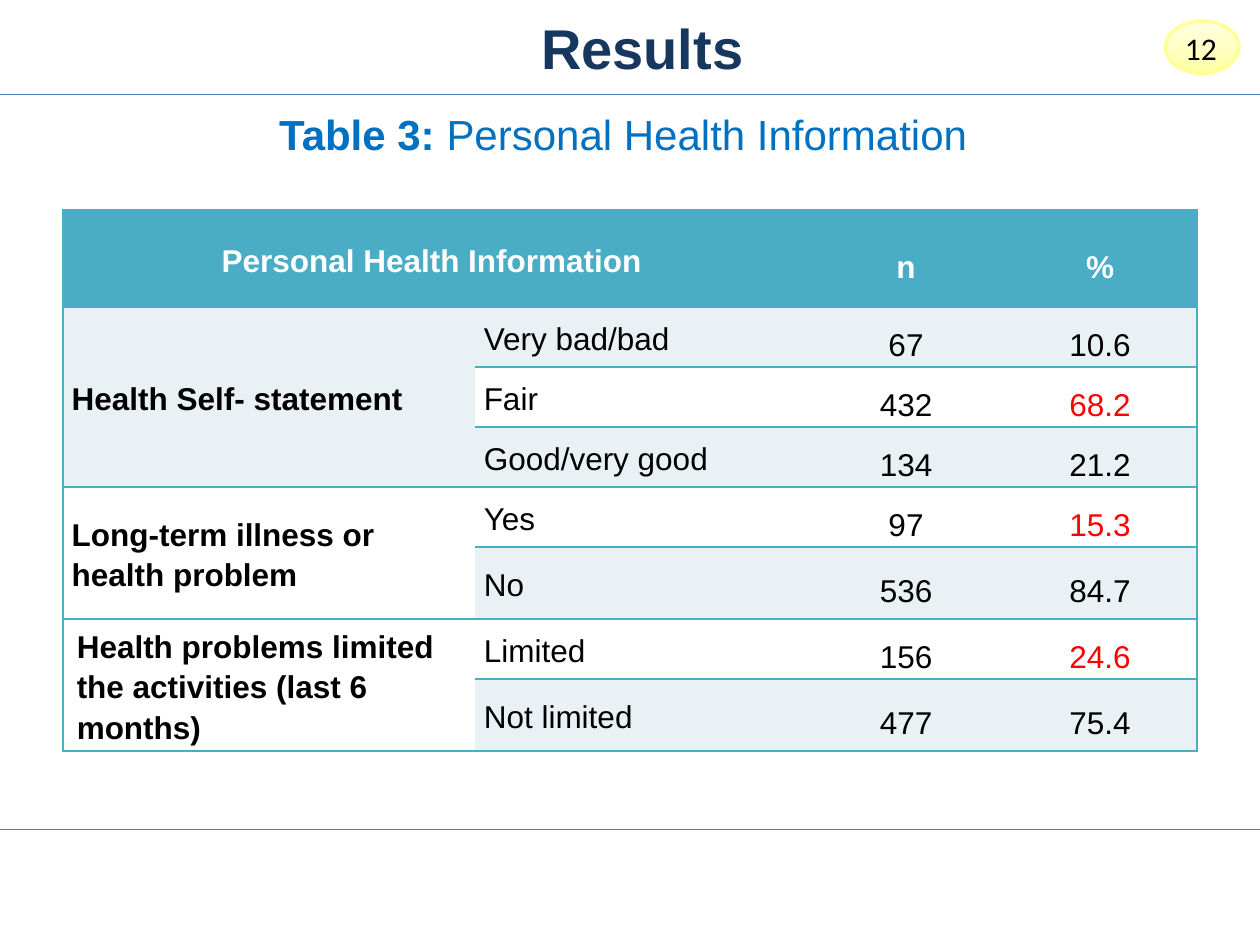
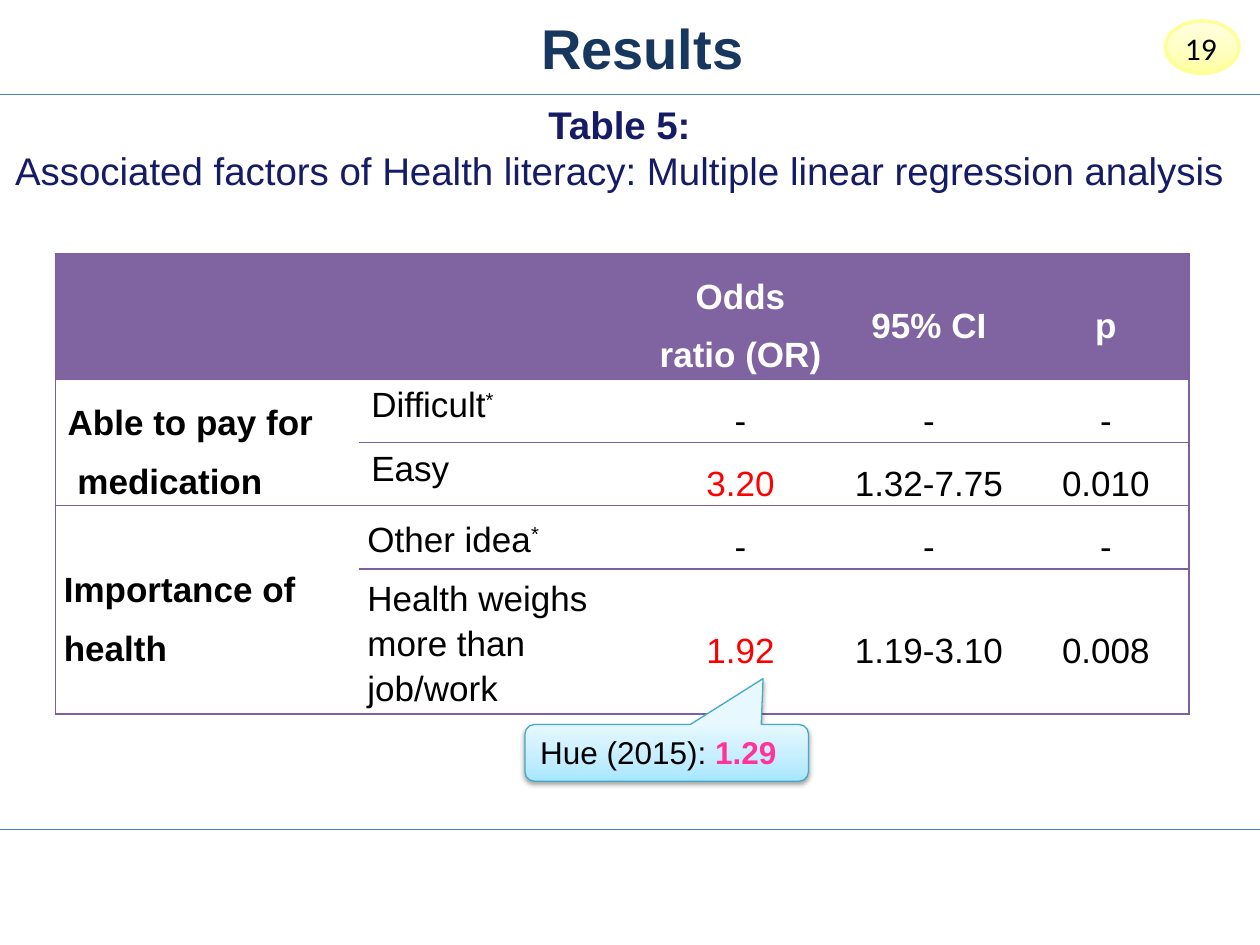
"""Build two result slides, each with a table of survey findings."""
from copy import deepcopy

from lxml import etree
from pptx import Presentation
from pptx.dml.color import RGBColor
from pptx.enum.shapes import MSO_CONNECTOR, MSO_SHAPE
from pptx.enum.text import MSO_ANCHOR, MSO_AUTO_SIZE, PP_ALIGN
from pptx.oxml.ns import qn
from pptx.util import Pt

LEFT, MID = PP_ALIGN.LEFT, PP_ALIGN.CENTER
TOP, CORE = MSO_ANCHOR.TOP, MSO_ANCHOR.MIDDLE
FIXED = MSO_AUTO_SIZE.NONE
LINE = MSO_CONNECTOR.STRAIGHT
OVAL, BUBBLE = MSO_SHAPE.OVAL, MSO_SHAPE.ROUNDED_RECTANGULAR_CALLOUT

BLACK = RGBColor(0x00, 0x00, 0x00)
WHITE = RGBColor(0xFF, 0xFF, 0xFF)
RED = RGBColor(0xFF, 0x00, 0x00)
PINK = RGBColor(0xFF, 0x33, 0x99)
NAVY = RGBColor(0x17, 0x37, 0x5E)
INDIGO = RGBColor(0x15, 0x1B, 0x65)
BLUE = RGBColor(0x00, 0x70, 0xC0)
RULE = RGBColor(0x4B, 0x7E, 0xBC)
TEAL = RGBColor(0x4B, 0xAC, 0xC6)
PALE = RGBColor(0xE9, 0xF1, 0xF5)
PURPLE = RGBColor(0x80, 0x64, 0xA2)
PLUM = RGBColor(0x7D, 0x60, 0xA0)
CYAN = RGBColor(0x46, 0xAA, 0xC5)
LEMON = RGBColor(0xFF, 0xFF, 0x99)
YELLOWS = [(0, RGBColor(0xFF, 0xFF, 0xA0)), (0.5, RGBColor(0xFF, 0xFF, 0xC5)),
           (1, RGBColor(0xFF, 0xFF, 0xE3))]
SKIES = [(0, RGBColor(0xA7, 0xE6, 0xFF)), (0.35, RGBColor(0xC1, 0xED, 0xFF)),
         (1, RGBColor(0xE7, 0xF8, 0xFF))]
PLAIN = "{2D5ABB26-0587-4C30-8999-92F81FD0307C}"


def put(frame, text, size=18, color=BLACK, bold=False, font="Arial",
        align=LEFT, space=None, indent=0, anchor=TOP, pad=(7.2, 3.6)):
    """Fill a frame with paragraphs, each a string or a list of (text, changes)."""
    frame.word_wrap = True
    frame.vertical_anchor = anchor
    frame.margin_left = frame.margin_right = Pt(pad[0])
    frame.margin_top = frame.margin_bottom = Pt(pad[1])
    for i, line in enumerate([text] if isinstance(text, str) else text):
        para = frame.add_paragraph() if i else frame.paragraphs[0]
        para.alignment = align
        if space:
            para.line_spacing = space
        if indent:
            para._p.get_or_add_pPr().set("marL", str(Pt(indent)))
        for words, change in [(line, {})] if isinstance(line, str) else line:
            run = para.add_run()
            run.text = words
            run.font.name = font
            run.font.size = Pt(size)
            run.font.bold = change.get("bold", bold)
            run.font.color.rgb = change.get("color", color)
            if change.get("raised"):
                run._r.get_or_add_rPr().set("baseline", "30000")


def edge(cell, sides, color, width):
    """Draw the named sides of a cell, given in the order L, R, T, B."""
    props = cell._tc.get_or_add_tcPr()
    for side in sides:
        line = etree.SubElement(props, qn("a:ln" + side), w=str(Pt(width)))
        fill = etree.SubElement(line, qn("a:solidFill"))
        etree.SubElement(fill, qn("a:srgbClr"), val=str(color))


class Deck:
    """Hold the presentation, its shared style and the current slide."""

    def __init__(self):
        """Start an empty deck."""
        self.show = Presentation()
        self.show.slide_width, self.show.slide_height = Pt(720), Pt(540)

    def start(self, number):
        """Add a slide with the shared title, rules and number badge."""
        self.slide = self.show.slides.add_slide(self.show.slide_layouts[5])
        self.shapes = self.slide.shapes
        title = self.shapes.title
        title.left, title.top, title.width, title.height = map(Pt, (118, 0, 507, 54))
        title.text_frame.auto_size = FIXED
        put(title.text_frame, "Results ", size=32, color=NAVY, bold=True,
            align=MID, anchor=CORE)
        self.rule(54, 1)
        self.rule(474, 0.75)
        self.shape(OVAL, (666, 12, 42, 30), YELLOWS, LEMON, 2)
        self.text((670, 13, 38, 29), number, font="Calibri")

    def rule(self, y, width):
        """Draw a line across the slide."""
        line = self.shapes.add_connector(LINE, 0, Pt(y), Pt(720), Pt(y))
        line.line.color.rgb = RULE
        line.line.width = Pt(width)
        etree.SubElement(line._element.spPr, qn("a:effectLst"))

    def text(self, box, text, **form):
        """Add a text box."""
        put(self.shapes.add_textbox(*map(Pt, box)).text_frame, text, **form)

    def shape(self, kind, box, stops, color, width):
        """Add a shape with a three-stop gradient that rises from its base."""
        shape = self.shapes.add_shape(kind, *map(Pt, box))
        shape.shadow.inherit = False
        shape.line.color.rgb = color
        shape.line.width = Pt(width)
        shape.fill.gradient()
        shape.fill.gradient_angle = 90
        ramp = shape._element.spPr.find(".//" + qn("a:gsLst"))
        ramp.append(deepcopy(ramp[0]))
        for stop, (place, tint) in zip(shape.fill.gradient_stops, stops):
            stop.position = place
            stop.color.rgb = tint
        return shape

    def bubble(self, box, tip, text):
        """Add a callout with a soft shadow."""
        shape = self.shape(BUBBLE, box, SKIES, CYAN, 0.75)
        shape.adjustments[0], shape.adjustments[1] = tip
        glow = etree.SubElement(
            shape._element.spPr.find(qn("a:effectLst")), qn("a:outerShdw"),
            blurRad=str(Pt(3.1)), dist=str(Pt(1.6)), dir="5400000", rotWithShape="0")
        tone = etree.SubElement(glow, qn("a:srgbClr"), val=str(BLACK))
        etree.SubElement(tone, qn("a:alpha"), val="38000")
        put(shape.text_frame, text)

    def table(self, spot, cols, highs, rows, head, fills, line, width, size):
        """Add a table; None joins a cell to the left in the head, or above."""
        frame = self.shapes.add_table(len(rows), len(cols), *map(
            Pt, (*spot, sum(cols), sum(highs))))
        grid = frame.table
        grid.first_row = grid.horz_banding = False
        grid._tbl.tblPr.find(qn("a:tableStyleId")).text = PLAIN
        for col, wide in zip(grid.columns, cols):
            col.width = Pt(wide)
        for row, high in zip(grid.rows, highs):
            row.height = Pt(high)
        grid.cell(0, 0).merge(grid.cell(0, 1))
        heads = [r for r in range(1, len(rows)) if rows[r][0] is not None]
        lasts = [r - 1 for r in heads[1:]] + [len(rows) - 1]
        for first, last in zip(heads, lasts):
            grid.cell(first, 0).merge(grid.cell(last, 0))
        for r, row in enumerate(rows):
            for c, item in enumerate(row):
                cell = grid.cell(r, c)
                sides = "L" * (c == 0) + "R" * (c == len(cols) - 1)
                sides += "T" * (c > 0 or r == 0 or r in heads)
                sides += "B" * (c > 0 or r == 0 or r in heads or r in lasts)
                edge(cell, sides, line, width)
                cell.fill.solid()
                shade = r if c or item is not None else max(h for h in heads + [0] if h <= r)
                cell.fill.fore_color.rgb = head if r == 0 else fills[shade % len(fills)]
                cell.vertical_anchor = CORE
                cell.margin_left = cell.margin_right = Pt(5)
                cell.margin_top = cell.margin_bottom = 0
                if not item:
                    continue
                form = {"size": size, "bold": r == 0 or c == 0, "pad": (5, 0),
                        "color": BLACK if r else WHITE, "anchor": CORE,
                        "align": MID if r == 0 or c > 1 else LEFT,
                        "space": 1.5 if c > 1 else 1.15}
                text, more = item if isinstance(item, tuple) else (item, {})
                form.update(more)
                pad = form.pop("pad")
                form.pop("anchor")
                cell.margin_left = cell.margin_right = Pt(pad[0])
                put_cell(cell, text, form)


def put_cell(cell, text, form):
    """Write into a cell while keeping its own margins and anchor."""
    sides = cell.margin_left, cell.margin_right
    put(cell.text_frame, text, **form)
    cell.text_frame._txBody.bodyPr.attrib.clear()
    cell.margin_left, cell.margin_right = sides


def health(deck):
    """Build the slide on personal health."""
    deck.start("12")
    deck.text((21.6, 54, 669, 38), [[("Table 3: ", {"bold": True}),
              ("Personal Health Information", {})]],
              size=24, color=BLUE, align=MID, space=1.15)
    red = {"color": RED}
    rows = [
        ["Personal Health Information ", None, "n", "%"],
        ["Health Self- statement", "Very bad/bad", "67", "10.6"],
        [None, "Fair", "432", ("68.2", red)],
        [None, "Good/very good", "134", "21.2"],
        ["Long-term illness or health problem", "Yes", "97", ("15.3", red)],
        [None, "No", "536", "84.7"],
        [("Health problems limited the activities (last 6 months)", {"indent": 2.9}),
         "Limited", "156", ("24.6", red)],
        [None, "Not limited", "477", "75.4"]]
    fills = [WHITE, PALE, WHITE, PALE, WHITE, PALE, WHITE, PALE]
    deck.table((36, 120), (235.5, 190.8, 110.9, 110.9),
               (55.4, 34.3, 34.3, 34.3, 34.3, 41.2, 34.3, 41.2),
               rows, TEAL, fills, TEAL, 1, 18)


def factors(deck):
    """Build the slide on the factors of health literacy."""
    deck.start("19")
    deck.text((0, 54, 708, 60), [[("Table 5:", {"bold": True})],
              "Associated factors of Health literacy: Multiple linear regression analysis"],
              size=22, color=INDIGO, align=MID, pad=(0, 3.6))
    red = {"color": RED}
    wide = {"space": 1.5}
    inset = {"pad": (0, 0), "indent": 7.2}
    tight = {**inset, "space": Pt(16)}
    star = ("*", {"raised": True})
    rows = [
        ["", None, "Odds ratio (OR)", "95% CI", "p"],
        [(["Able to pay for", " medication"], {**inset, **wide}),
         ([[("Difficult", {}), star]], tight), "-", "-", "-"],
        [None, ("Easy", tight), ("3.20", red), "1.32-7.75", "0.010"],
        [("Importance of health", wide), ([[("Other idea", {}), star]], {}), "-", "-", "-"],
        [None, "Health weighs more than job/work", ("1.92", red), "1.19-3.10", "0.008"]]
    deck.table((31.5, 145), (173.5, 164.2, 108, 107.3, 95), (72, 36, 36, 36, 82.8),
               rows, PURPLE, [WHITE], PLUM, 0.75, 20)
    deck.bubble((300, 414, 162, 32.4), (0.34, -1.31),
                [[("Hue (2015): ", {}), ("1.29", {"color": PINK, "bold": True})]])


def main():
    """Build and save the deck."""
    deck = Deck()
    health(deck)
    factors(deck)
    deck.show.save("out.pptx")


if __name__ == "__main__":
    main()
